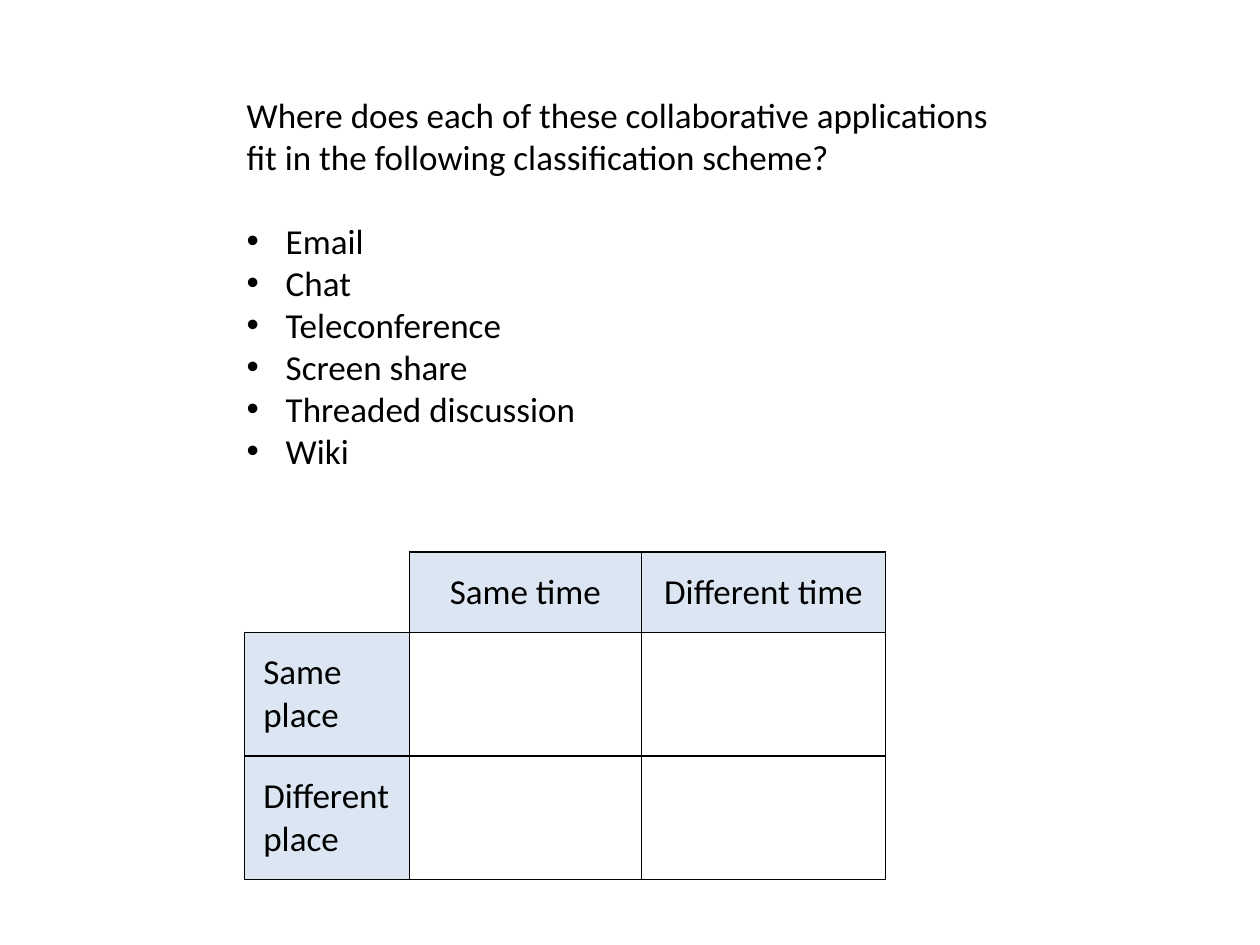
import pptx
import pptx.dml.color
import pptx.enum.text
import pptx.oxml.ns
import pptx.util
from lxml import etree

Inches = pptx.util.Inches
Pt = pptx.util.Pt

# Content
QUESTION = ("Where does each of these collaborative applications "
            "fit in the following classification scheme?")
APPLICATIONS = ["Email", "Chat", "Teleconference", "Screen share",
                "Threaded discussion", "Wiki"]
SCHEME = [
    ["", "Same time", "Different time"],
    ["Same place", "", ""],
    ["Different place", "", ""],
]

# Layout in inches
COLUMN_WIDTHS = [1.31, 1.84, 1.94]
ROW_HEIGHTS = [0.64, 0.98, 0.98]
CELL_MARGIN = 0.15
BULLET_INDENT = 0.31

THEME = {"font": "Calibri", "size": 20, "text": "000000",
         "header": "DCE6F2", "border": "000000", "border_width": 1}


def color(name):
    return pptx.dml.color.RGBColor.from_string(THEME[name])


def add_element(parent, tag, **attributes):
    return etree.SubElement(parent, pptx.oxml.ns.qn(tag), attributes)


def format_runs(paragraph):
    for run in paragraph.runs:
        run.font.name = THEME["font"]
        run.font.size = Pt(THEME["size"])
        run.font.color.rgb = color("text")


def add_bullet(paragraph):
    properties = paragraph._p.get_or_add_pPr()
    properties.set("marL", str(Inches(BULLET_INDENT)))
    properties.set("indent", str(-Inches(BULLET_INDENT)))
    add_element(properties, "a:buFont", typeface="Arial")
    add_element(properties, "a:buChar", char="•")


def set_borders(cell, visible_sides):
    properties = cell._tc.get_or_add_tcPr()
    for side in "LRTB":
        line = add_element(properties, f"a:ln{side}",
                           w=str(Pt(THEME["border_width"])))
        if side in visible_sides:
            fill = add_element(line, "a:solidFill")
            add_element(fill, "a:srgbClr", val=THEME["border"])
        else:
            add_element(line, "a:noFill")


def add_question(slide):
    box = slide.shapes.add_textbox(Inches(1.86), Inches(0.69),
                                   Inches(6.26), Inches(3.13))
    text_frame = box.text_frame
    text_frame.word_wrap = True
    text_frame.text = "\n".join([QUESTION] + APPLICATIONS)
    question, *bullets = text_frame.paragraphs
    question.space_after = Pt(24)
    for paragraph in bullets:
        add_bullet(paragraph)
    for paragraph in text_frame.paragraphs:
        format_runs(paragraph)


def add_scheme(slide):
    frame = slide.shapes.add_table(
        len(SCHEME), len(SCHEME[0]), Inches(1.94), Inches(4.38),
        Inches(sum(COLUMN_WIDTHS)), Inches(sum(ROW_HEIGHTS)))
    table = frame.table
    table.first_row = table.horz_banding = False
    for column, width in zip(table.columns, COLUMN_WIDTHS):
        column.width = Inches(width)
    for row, height in zip(table.rows, ROW_HEIGHTS):
        row.height = Inches(height)

    for row_index, labels in enumerate(SCHEME):
        for column_index, label in enumerate(labels):
            cell = table.cell(row_index, column_index)
            is_corner = row_index == column_index == 0
            set_borders(cell, "RB" if is_corner else "LRTB")
            if not label:
                cell.fill.background()
                continue
            # Header cells
            cell.fill.solid()
            cell.fill.fore_color.rgb = color("header")
            cell.vertical_anchor = pptx.enum.text.MSO_ANCHOR.MIDDLE
            cell.margin_left = cell.margin_right = Inches(CELL_MARGIN)
            cell.margin_top = cell.margin_bottom = Inches(CELL_MARGIN)
            cell.text_frame.text = label
            paragraph = cell.text_frame.paragraphs[0]
            if row_index == 0:
                paragraph.alignment = pptx.enum.text.PP_ALIGN.CENTER
            format_runs(paragraph)


def main():
    presentation = pptx.Presentation()
    presentation.slide_width = Inches(10)
    presentation.slide_height = Inches(7.5)
    slide = presentation.slides.add_slide(presentation.slide_layouts[6])
    add_scheme(slide)
    add_question(slide)
    presentation.save("out.pptx")


if __name__ == "__main__":
    main()
